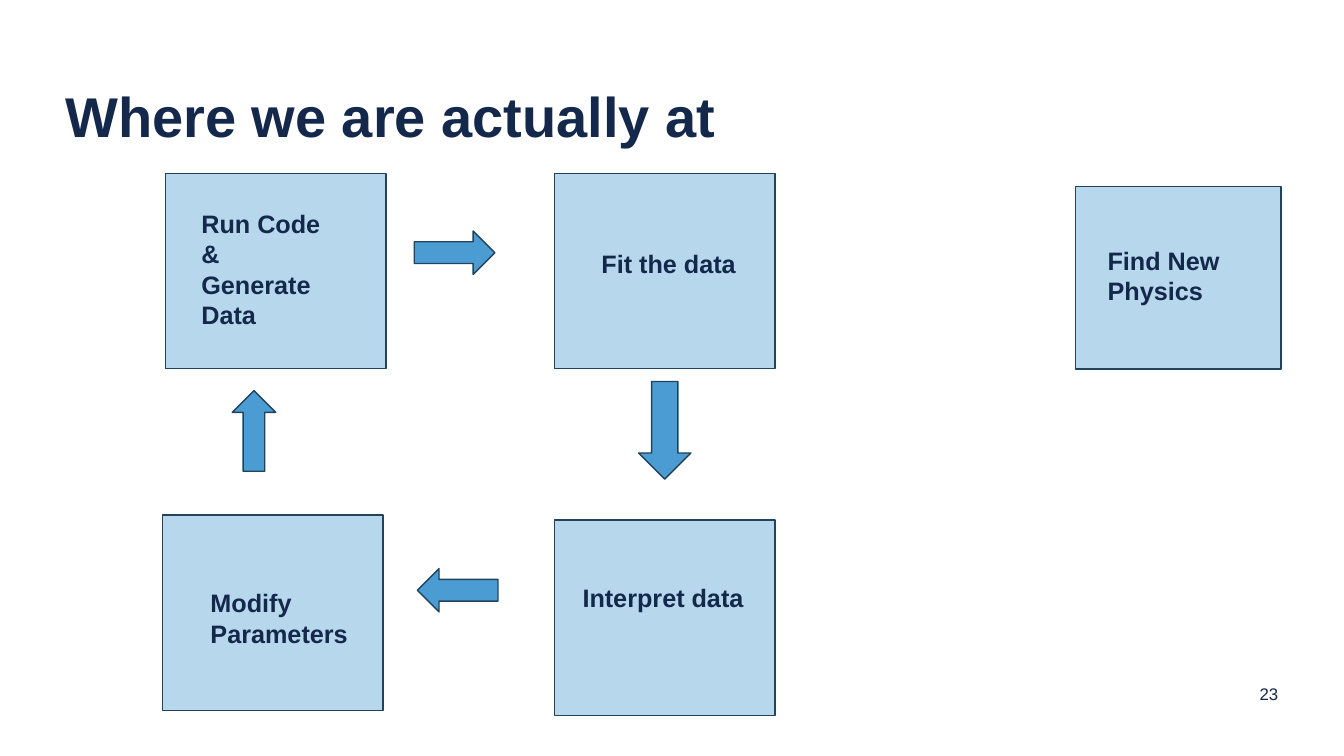
from pptx import Presentation
from pptx.dml.color import RGBColor
from pptx.enum.shapes import MSO_SHAPE
from pptx.enum.text import MSO_ANCHOR, PP_ALIGN
from pptx.util import Pt

RECT, ARROW = MSO_SHAPE.RECTANGLE, MSO_SHAPE.RIGHT_ARROW
TOP, MIDDLE = MSO_ANCHOR.TOP, MSO_ANCHOR.MIDDLE
LEFT, RIGHT = PP_ALIGN.LEFT, PP_ALIGN.RIGHT

NAVY = RGBColor(0x13, 0x28, 0x4B)
PALE_BLUE = RGBColor(0xB7, 0xD7, 0xED)
BLUE = RGBColor(0x4B, 0x9C, 0xD3)
OUTLINE = RGBColor(0x21, 0x44, 0x5C)

STEP_W, STEP_H = 157.7, 139.7

# Box: left, top, width, height; label: left, top, width, height, text
STEPS = [
    ((118.1, 123.8, STEP_W, STEP_H),
     (136.8, 145.4, 115.2, 72.7, "Run Code &\nGenerate Data")),
    ((396, 123.8, STEP_W, STEP_H),
     (422.6, 173.5, 115.2, 28.8, "Fit the data")),
    ((768.2, 133.2, 146.9, 130.3),
     (784.1, 171.4, 131, 51.1, "Find New Physics")),
    ((115.9, 367.9, STEP_W, STEP_H),
     (143.3, 416.2, 115.2, 51.1, "Modify Parameters")),
    ((396, 371.5, STEP_W, STEP_H),
     (409, 412.6, 131, 28.8, "Interpret data")),
]

# Left, top, width, height before rotation; clockwise angle
ARROWS = [
    (295.9, 165, 57.6, 31, 0),
    (439.9, 288.7, 69.8, 37.4, 90),
    (298.1, 406.1, 57.6, 31, 180),
    (152.6, 292.3, 57.6, 31, 270),
]


def add_text(s, x, y, w, h, text, size=18, bold=True, align=LEFT,
             anchor=TOP, top_inset=3.6):
    tf = s.shapes.add_textbox(Pt(x), Pt(y), Pt(w), Pt(h)).text_frame
    tf.word_wrap = True
    tf.vertical_anchor = anchor
    tf.margin_top = Pt(top_inset)
    tf.text = text
    for p in tf.paragraphs:
        p.alignment = align
        for r in p.runs:
            r.font.name = "Arial"
            r.font.size = Pt(size)
            r.font.bold = bold
            r.font.color.rgb = NAVY


def add_block(s, kind, x, y, w, h, fill, angle=0):
    sp = s.shapes.add_shape(kind, Pt(x), Pt(y), Pt(w), Pt(h))
    sp.shadow.inherit = False
    sp.rotation = angle
    sp.fill.solid()
    sp.fill.fore_color.rgb = fill
    sp.line.color.rgb = OUTLINE
    sp.line.width = Pt(1)


def main():
    prs = Presentation()
    prs.slide_width, prs.slide_height = Pt(960), Pt(540)
    s = prs.slides.add_slide(prs.slide_layouts[6])

    # Title and page number
    add_text(s, 39.6, 51.1, 880.6, 82.1, "Where we are actually at",
             size=40, top_inset=7.2)
    add_text(s, 707, 486, 213.1, 19.4, "23", size=12, bold=False,
             align=RIGHT, anchor=MIDDLE)

    # Steps of the cycle and the distant goal
    for box, label in STEPS:
        add_block(s, RECT, *box, PALE_BLUE)
        add_text(s, *label)

    # Arrows around the cycle
    for x, y, w, h, angle in ARROWS:
        add_block(s, ARROW, x, y, w, h, BLUE, angle)

    prs.save("out.pptx")


if __name__ == "__main__":
    main()
